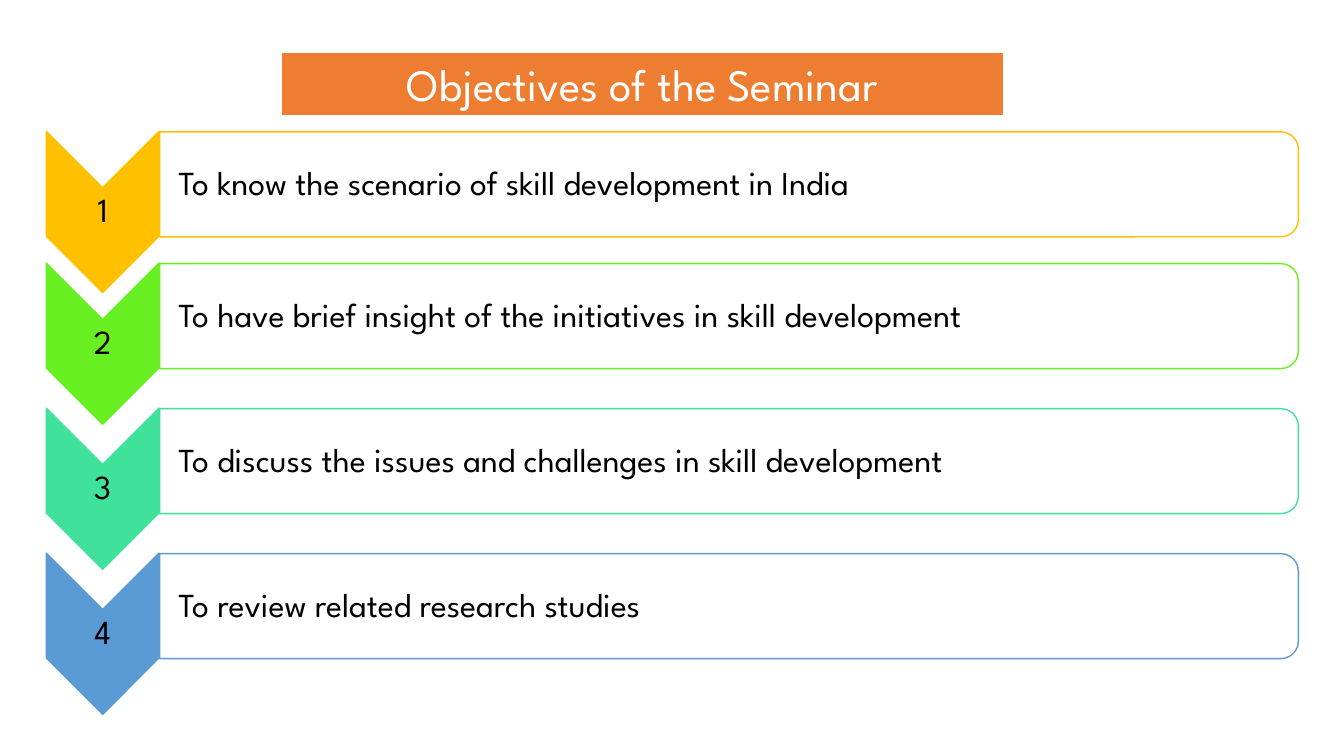
import pptx
import pptx.dml.color
import pptx.enum.shapes
import pptx.enum.text
import pptx.oxml
import pptx.oxml.ns
import pptx.util
from pptx.util import Pt

SHAPES = pptx.enum.shapes.MSO_SHAPE
ALIGN = pptx.enum.text.PP_ALIGN
MIDDLE = pptx.enum.text.MSO_ANCHOR.MIDDLE

FIRST_MIDDLE, SECOND_MIDDLE, ROW_STEP = 131.7, 225.8, 103.6
CHEVRON_DROP = 19.7
CHEVRON_LEFT, CHEVRON_WIDTH, CHEVRON_HEIGHT = 33, 80.6, 115.2
BAR_LEFT, BAR_WIDTH, BAR_HEIGHT = 114, 813.4, 75

OBJECTIVES = [
    ("To know the scenario of skill development in India", "FFC000"),
    ("To have brief insight of the initiatives in skill development", "67EF21"),
    ("To discuss the issues and challenges in skill development", "3FE19B"),
    ("To review related research studies", "5B9BD5"),
]


def rgb(code):
    return pptx.dml.color.RGBColor.from_string(code)


def assign(target, values):
    """Set every attribute named in values on target."""
    for attribute, value in values.items():
        setattr(target, attribute, value)


class ObjectivesSlide:
    def __init__(self, deck):
        self.slide = deck.slides.add_slide(deck.slide_layouts[5])
        self.font = "League Spartan"

    def set_words(self, frame, words, size, color, align, **paragraph_format):
        frame.text = words
        line = frame.paragraphs[0]
        assign(line, {"alignment": align, **paragraph_format})
        assign(line.font, {"name": self.font, "size": Pt(size)})
        line.font.color.rgb = rgb(color)

    def paint(self, part, fill, outline, weight):
        part.fill.solid()
        part.fill.fore_color.rgb = rgb(fill)
        part.line.color.rgb = rgb(outline)
        part.line.width = Pt(weight)

    def title(self, words, left, top, width, height):
        heading = self.slide.shapes.title
        assign(heading, {"left": Pt(left), "top": Pt(top),
                         "width": Pt(width), "height": Pt(height)})
        self.paint(heading, "ED7D31", "FFFFFF", 1.5)
        assign(heading.text_frame, {
            "vertical_anchor": MIDDLE, "word_wrap": True,
            "auto_size": pptx.enum.text.MSO_AUTO_SIZE.NONE})
        self.set_words(heading.text_frame, words, 32, "FFFFFF", ALIGN.CENTER)

    def turned(self, preset, left, middle, width, height, fill, outline):
        """Add a shape turned by 90 degrees; width and height are as seen."""
        part = self.slide.shapes.add_shape(
            preset, Pt(left + (width - height) / 2), Pt(middle - width / 2),
            Pt(height), Pt(width))
        part.rotation = 90
        part.shadow.inherit = False
        self.paint(part, fill, outline, 1)
        return part

    def chevron(self, middle, color):
        self.turned(SHAPES.CHEVRON, CHEVRON_LEFT, middle,
                    CHEVRON_WIDTH, CHEVRON_HEIGHT, color, color)

    def bar(self, middle, color):
        panel = self.turned(SHAPES.ROUND_2_SAME_RECTANGLE, BAR_LEFT, middle,
                            BAR_WIDTH, BAR_HEIGHT, "FFFFFF", color)
        tint = panel.element.spPr.find(
            "/".join(map(pptx.oxml.ns.qn, ("a:solidFill", "a:srgbClr"))))
        tint.append(pptx.oxml.parse_xml(
            f'<a:alpha {pptx.oxml.ns.nsdecls("a")} val="90000"/>'))

    def label(self, words, left, middle, width, height, align, inset=1.2):
        box = self.slide.shapes.add_textbox(
            Pt(left), Pt(middle - height / 2), Pt(width), Pt(height))
        assign(box.text_frame, {
            "word_wrap": True, "vertical_anchor": MIDDLE,
            "margin_left": Pt(inset), "margin_right": Pt(1.2),
            "margin_top": Pt(1.2), "margin_bottom": Pt(1.2)})
        self.set_words(box.text_frame, words, 24, "000000", align,
                       line_spacing=0.9)

    def objective(self, number, words, color, middle):
        """Add one row: numbered chevron, outlined bar and its sentence."""
        self.chevron(middle + CHEVRON_DROP, color)
        self.label(str(number), CHEVRON_LEFT, middle + CHEVRON_DROP,
                   CHEVRON_WIDTH, 34.6, ALIGN.CENTER)
        self.bar(middle, color)
        self.label(words, BAR_LEFT, middle, 810, 67.7, ALIGN.LEFT, inset=13.4)


def main():
    deck = pptx.Presentation()
    assign(deck, {"slide_width": Pt(960), "slide_height": Pt(540)})
    seminar = ObjectivesSlide(deck)
    seminar.title("Objectives of the Seminar", 200.5, 37, 517, 46)
    for index, (words, color) in enumerate(OBJECTIVES):
        middle = SECOND_MIDDLE + (index - 1) * ROW_STEP if index else FIRST_MIDDLE
        seminar.objective(index + 1, words, color, middle)
    deck.save("out.pptx")


if __name__ == "__main__":
    main()
